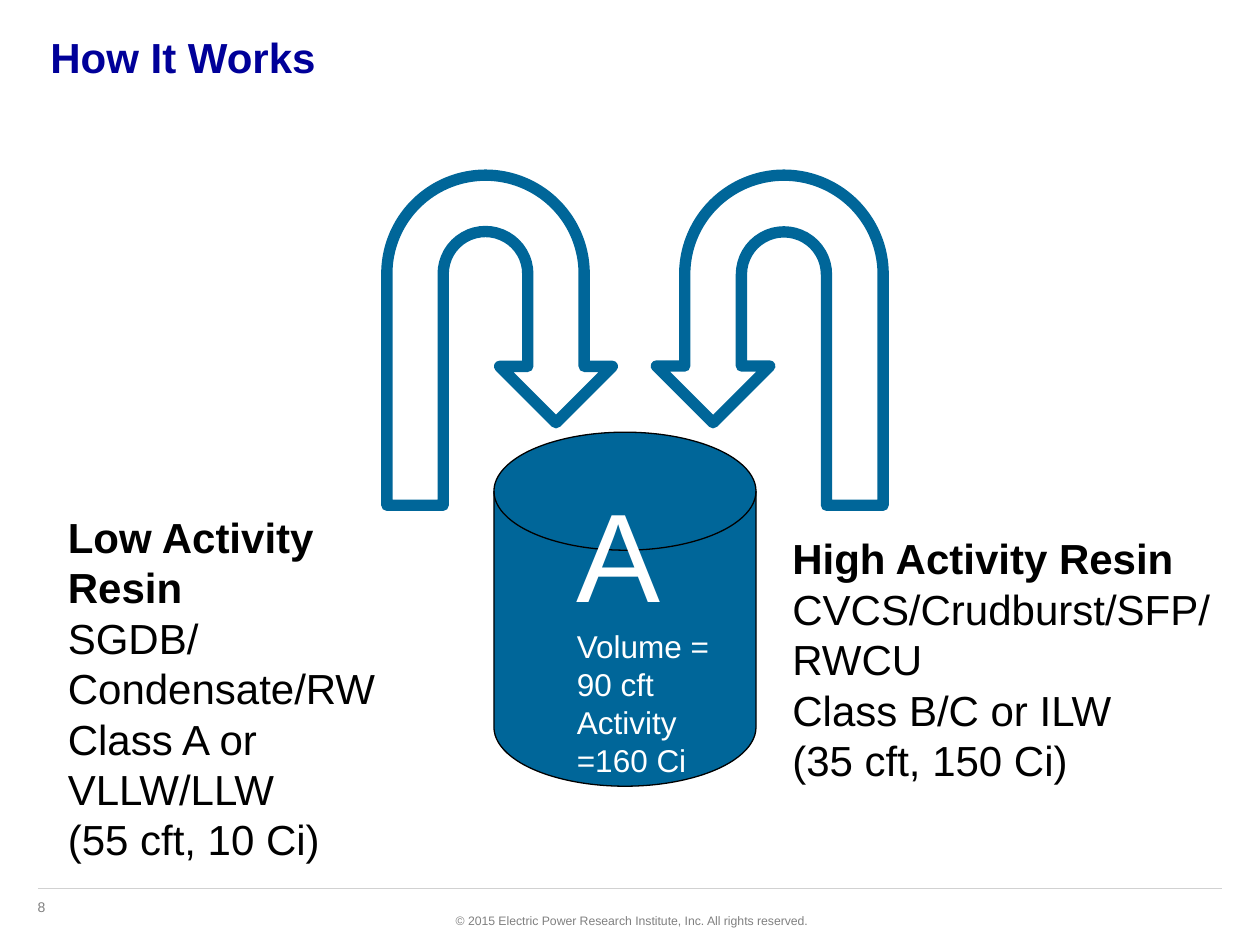
import dataclasses

import pptx
import pptx.dml.color
import pptx.enum.shapes
import pptx.enum.text
import pptx.oxml.ns
import pptx.util
from lxml import etree

Inches = pptx.util.Inches
Pt = pptx.util.Pt
Preset = pptx.enum.shapes.MSO_SHAPE
Align = pptx.enum.text.PP_ALIGN
Anchor = pptx.enum.text.MSO_ANCHOR
qn = pptx.oxml.ns.qn


def rgb(value):
    return pptx.dml.color.RGBColor.from_string(value)


@dataclasses.dataclass(frozen=True)
class Theme:
    font: str = "Arial"
    title: str = "000099"
    body: str = "000000"
    accent: str = "006699"
    inverse: str = "FFFFFF"
    muted: str = "808080"
    rule: str = "D1D1D1"
    heading_size: float = 24
    letter_size: float = 72
    detail_size: float = 18
    number_size: float = 8
    legal_size: float = 7
    hairline: float = 0.75
    arrow_line: float = 6.5


def write(paragraph, text, *, font, size, color, bold=False, align=Align.LEFT):
    paragraph.alignment = align
    run = paragraph.add_run()
    run.text = text
    run.font.name = font
    run.font.size = Pt(size)
    run.font.bold = bold
    run.font.color.rgb = rgb(color)


class SlideBuilder:
    def __init__(self, slide, theme):
        self.slide = slide
        self.theme = theme

    def title(self, text, box):
        title = self.slide.shapes.title
        title.left, title.top, title.width, title.height = map(Inches, box)
        title.text_frame.vertical_anchor = Anchor.TOP
        write(title.text_frame.paragraphs[0], text, font=self.theme.font,
              size=self.theme.heading_size, color=self.theme.title, bold=True)

    def text(self, lines, box, wrap=True, **shared):
        """Add a text box; each line is a text and its own format."""
        frame = self.slide.shapes.add_textbox(*map(Inches, box)).text_frame
        frame.word_wrap = wrap
        for index, (line, own) in enumerate(lines):
            paragraph = frame.add_paragraph() if index else frame.paragraphs[0]
            write(paragraph, line, **{"font": self.theme.font, **shared, **own})

    def resin(self, heading, details, box):
        lines = [(heading, {"bold": True})] + [(detail, {}) for detail in details]
        self.text(lines, box, size=self.theme.heading_size, color=self.theme.body)

    def shape(self, preset, box, line_color, line_width, fill=None):
        shape = self.slide.shapes.add_shape(preset, *map(Inches, box))
        shape.shadow.inherit = False
        if fill:
            shape.fill.solid()
            shape.fill.fore_color.rgb = rgb(fill)
        else:
            shape.fill.background()
        shape.line.color.rgb = rgb(line_color)
        shape.line.width = Pt(line_width)
        return shape

    def feed_arrow(self, box, mirrored=False):
        arrow = self.shape(Preset.U_TURN_ARROW, box, self.theme.accent,
                           self.theme.arrow_line)
        if mirrored:
            arrow._element.spPr.find(qn("a:xfrm")).set("flipH", "1")

    def rule(self, left, right, y):
        rule = self.slide.shapes.add_connector(
            pptx.enum.shapes.MSO_CONNECTOR.STRAIGHT,
            Inches(left), Inches(y), Inches(right), Inches(y))
        rule.line.color.rgb = rgb(self.theme.rule)
        rule.line.width = Pt(self.theme.hairline)
        etree.SubElement(rule._element.spPr, qn("a:effectLst"))


def main():
    theme = Theme()
    deck = pptx.Presentation()
    deck.slide_width, deck.slide_height = Inches(10), Inches(7.5)
    page = SlideBuilder(deck.slides.add_slide(deck.slide_layouts[5]), theme)

    page.text([("8", {})], (0.2, 7.08, 0.66, 0.24),
              size=theme.number_size, color=theme.muted)
    page.rule(0.3, 9.7, 7.05)
    page.text([("© 2015 Electric Power Research Institute, Inc. All rights reserved.", {})],
              (3.49, 7.2, 3.02, 0.22), wrap=False, align=Align.RIGHT,
              size=theme.legal_size, color=theme.muted)
    page.title("How It Works", (0.3, 0.2, 9.4, 0.8))

    page.shape(Preset.FLOWCHART_MAGNETIC_DISK, (3.92, 3.43, 2.08, 2.81),
               theme.body, theme.hairline, fill=theme.accent)
    page.resin("High Activity Resin",
               ["CVCS/Crudburst/SFP/RWCU", "Class B/C or ILW", "(35 cft, 150 Ci)"],
               (6.19, 4.18, 3.81, 2.12))
    page.resin("Low Activity Resin",
               ["SGDB/Condensate/RW", "Class A or VLLW/LLW", "(55 cft, 10 Ci)"],
               (0.44, 4.01, 2.96, 2.93))
    page.feed_arrow((3.07, 1.39, 1.79, 2.62))
    page.text([("A", {"size": theme.letter_size}),
               ("Volume = 90 cft", {}),
               ("Activity =160 Ci", {})],
              (4.48, 3.73, 1.45, 2.52), size=theme.detail_size, color=theme.inverse)
    page.feed_arrow((5.21, 1.39, 1.8, 2.62), mirrored=True)

    deck.save("out.pptx")


if __name__ == "__main__":
    main()
